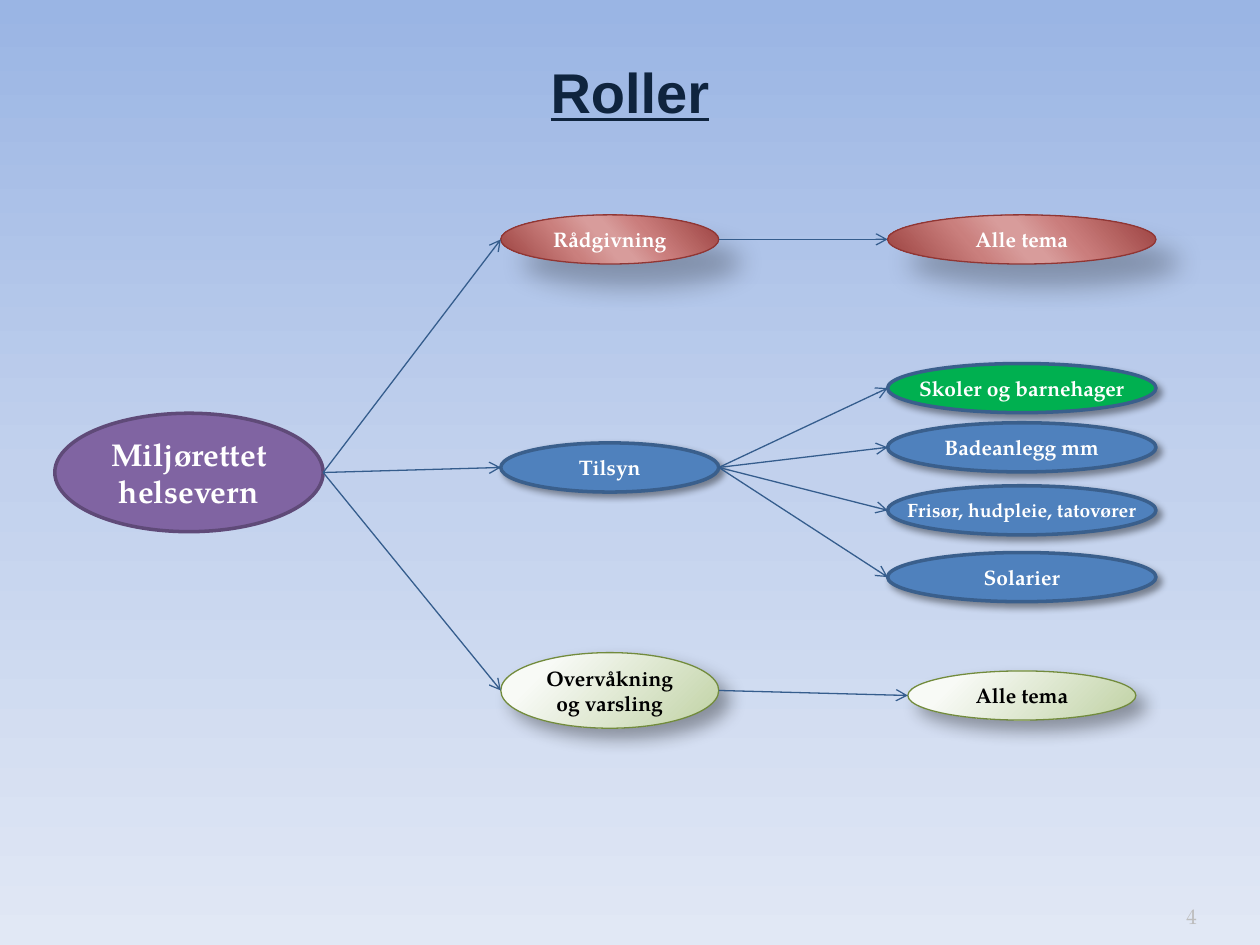
from dataclasses import dataclass

from lxml.etree import SubElement
from pptx import Presentation
from pptx.dml.color import RGBColor
from pptx.enum.shapes import MSO_CONNECTOR, MSO_SHAPE
from pptx.enum.text import MSO_ANCHOR, PP_ALIGN
from pptx.oxml.ns import qn
from pptx.util import Inches, Pt


@dataclass(frozen=True)
class Theme:
    title_font: str = "Arial"
    body_font: str = "TeX Gyre Pagella"
    title_size: int = 32
    root_size: int = 18
    body_size: int = 12
    long_label_size: int = 11
    long_label_length: int = 24
    title_color: str = "0F243E"
    number_color: str = "BDBDBD"
    arrow_color: str = "355D8D"
    arrow_width: float = 0.75
    background: tuple = ((0, "9AB5E4"), (50, "C2D1ED"), (100, "E1E8F5"))


THEME = Theme()
RED_STOPS = ((0, "9A403E"), (33, "CA7D7C"), (47, "D89C9B"),
             (53, "D89C9B"), (68, "CA7F7D"), (100, "9A403E"))
GREEN_STOPS = ((20, "F8FAF6"), (100, "C0D2A4"))
BLUE_SHADOW = (40, 4, 3)

# Gradients have stops and an angle (None: circular from the top left corner).
# Shadows are opacity in percent, blur and distance in points.
STYLES = {
    "root": dict(fill="8064A2", line="5F4A78", width=2, text="FFFFFF"),
    "advice": dict(gradient=(RED_STOPS, 139), line="903634", width=0.75,
                   text="FFFFFF", shadow=(26, 15, 18)),
    "inspection": dict(fill="4F81BD", line="3A5F8C", width=2,
                       text="FFFFFF", shadow=BLUE_SHADOW),
    "highlight": dict(fill="00B050", line="3A5F8C", width=2,
                      text="FFFFFF", shadow=BLUE_SHADOW),
    "monitoring": dict(gradient=(GREEN_STOPS, None), line="728B3D", width=0.75,
                       text="000000", shadow=(35, 10.2, 8)),
}

TITLE = "Roller"
SLIDE_NUMBER = "4"
ROOT = ("Miljørettet helsevern", "root", 3.75, 2.13, 0.94)
# Each oval: text, style, vertical centre, width, height; each role has its themes.
ROLES = [
    (("Rådgivning", "advice", 1.9, 1.73, 0.39),
     [("Alle tema", "advice", 1.9, 2.13, 0.39)]),
    (("Tilsyn", "inspection", 3.71, 1.73, 0.39),
     [("Skoler og barnehager", "highlight", 3.08, 2.13, 0.39),
      ("Badeanlegg mm", "inspection", 3.55, 2.13, 0.39),
      ("Frisør, hudpleie, tatovører", "inspection", 4.05, 2.13, 0.39),
      ("Solarier", "inspection", 4.58, 2.13, 0.39)]),
    (("Overvåkning og varsling", "monitoring", 5.48, 1.73, 0.6),
     [("Alle tema", "monitoring", 5.52, 1.81, 0.39)]),
]
ROOT_CENTER, ROLE_CENTER, THEME_CENTER = 1.5, 4.84, 8.11
OVAL_LEFT_SITE, OVAL_RIGHT_SITE = 2, 6


def add_color(parent, color, opacity=None):
    element = SubElement(parent, qn("a:srgbClr"), val=color)
    if opacity is not None:
        SubElement(element, qn("a:alpha"), val=str(opacity * 1000))


def set_gradient(fill, properties, stops, angle):
    """Fill with the stops; properties is the XML element that holds the fill."""
    fill.gradient()
    gradient = properties.find(qn("a:gradFill"))
    for child in list(gradient):
        gradient.remove(child)
    stop_list = SubElement(gradient, qn("a:gsLst"))
    for position, color in stops:
        add_color(SubElement(stop_list, qn("a:gs"), pos=str(position * 1000)), color)
    if angle is None:
        circle = SubElement(gradient, qn("a:path"), attrib={"path": "circle"})
        SubElement(circle, qn("a:fillToRect"),
                   l="-15000", t="-15000", r="115000", b="115000")
    else:
        SubElement(gradient, qn("a:lin"), ang=str(angle * 60000), scaled="0")


def add_shadow(shape, opacity, blur, distance):
    effects = shape._element.spPr.find(qn("a:effectLst"))
    shadow = SubElement(effects, qn("a:outerShdw"), blurRad=str(Pt(blur)),
                        dist=str(Pt(distance)), dir=str(45 * 60000),
                        algn="tl", rotWithShape="0")
    add_color(shadow, "000000", opacity)


def write_text(shape, text, font, size, color, align, anchor, bold=True):
    frame = shape.text_frame
    frame.word_wrap = True
    frame.vertical_anchor = anchor
    paragraph = frame.paragraphs[0]
    paragraph.text = text
    paragraph.alignment = align
    paragraph.font.name = font
    paragraph.font.size = Pt(size)
    paragraph.font.bold = bold
    paragraph.font.color.rgb = RGBColor.from_string(color)
    return paragraph


def add_oval(slide, center, oval, size=THEME.body_size):
    text, style_name, middle, width, height = oval
    style = STYLES[style_name]
    shape = slide.shapes.add_shape(
        MSO_SHAPE.OVAL, Inches(center - width / 2), Inches(middle - height / 2),
        Inches(width), Inches(height))
    shape.shadow.inherit = False
    if "gradient" in style:
        set_gradient(shape.fill, shape._element.spPr, *style["gradient"])
    else:
        shape.fill.solid()
        shape.fill.fore_color.rgb = RGBColor.from_string(style["fill"])
    shape.line.color.rgb = RGBColor.from_string(style["line"])
    shape.line.width = Pt(style["width"])
    if "shadow" in style:
        add_shadow(shape, *style["shadow"])
    write_text(shape, text, THEME.body_font, size, style["text"],
               PP_ALIGN.CENTER, MSO_ANCHOR.MIDDLE)
    return shape


def add_theme_oval(slide, oval):
    """Add a flat oval whose label stays on one line, inside the outline."""
    is_long = len(oval[0]) > THEME.long_label_length
    size = THEME.long_label_size if is_long else THEME.body_size
    shape = add_oval(slide, THEME_CENTER, oval, size)
    shape.text_frame.word_wrap = False
    return shape


def add_arrow(slide, source, target):
    """Join the right end of one oval to the left end of another."""
    connector = slide.shapes.add_connector(
        MSO_CONNECTOR.STRAIGHT,
        source.left + source.width, source.top + source.height // 2,
        target.left, target.top + target.height // 2)
    # begin_connect knows only four sites, while an oval has eight.
    joints = connector._element.nvCxnSpPr.cNvCxnSpPr
    for tag, shape, site in (("a:stCxn", source, OVAL_RIGHT_SITE),
                             ("a:endCxn", target, OVAL_LEFT_SITE)):
        SubElement(joints, qn(tag), id=str(shape.shape_id), idx=str(site))
    connector.line.color.rgb = RGBColor.from_string(THEME.arrow_color)
    connector.line.width = Pt(THEME.arrow_width)
    properties = connector._element.spPr
    SubElement(properties.find(qn("a:ln")), qn("a:tailEnd"), type="arrow")
    SubElement(properties, qn("a:effectLst"))


def main():
    presentation = Presentation()
    presentation.slide_width, presentation.slide_height = Inches(10), Inches(7.5)
    slide = presentation.slides.add_slide(presentation.slide_layouts[6])
    background = slide.background.fill
    background_properties = slide._element.cSld.find(qn("p:bg")).find(qn("p:bgPr"))
    set_gradient(background, background_properties, THEME.background, 90)

    title = slide.shapes.add_textbox(Inches(0.5), Inches(0.3), Inches(9), Inches(0.85))
    paragraph = write_text(title, TITLE, THEME.title_font, THEME.title_size,
                           THEME.title_color, PP_ALIGN.CENTER, MSO_ANCHOR.MIDDLE)
    paragraph.font.underline = True

    root = add_oval(slide, ROOT_CENTER, ROOT, THEME.root_size)
    for role, themes in ROLES:
        role_oval = add_oval(slide, ROLE_CENTER, role)
        add_arrow(slide, root, role_oval)
        for theme in themes:
            add_arrow(slide, role_oval, add_theme_oval(slide, theme))

    number = slide.shapes.add_textbox(
        Inches(8.67), Inches(7.02), Inches(0.83), Inches(0.4))
    number.text_frame.margin_left = number.text_frame.margin_right = 0
    write_text(number, SLIDE_NUMBER, THEME.body_font, THEME.body_size,
               THEME.number_color, PP_ALIGN.RIGHT, MSO_ANCHOR.BOTTOM, bold=False)
    presentation.save("out.pptx")


if __name__ == "__main__":
    main()
